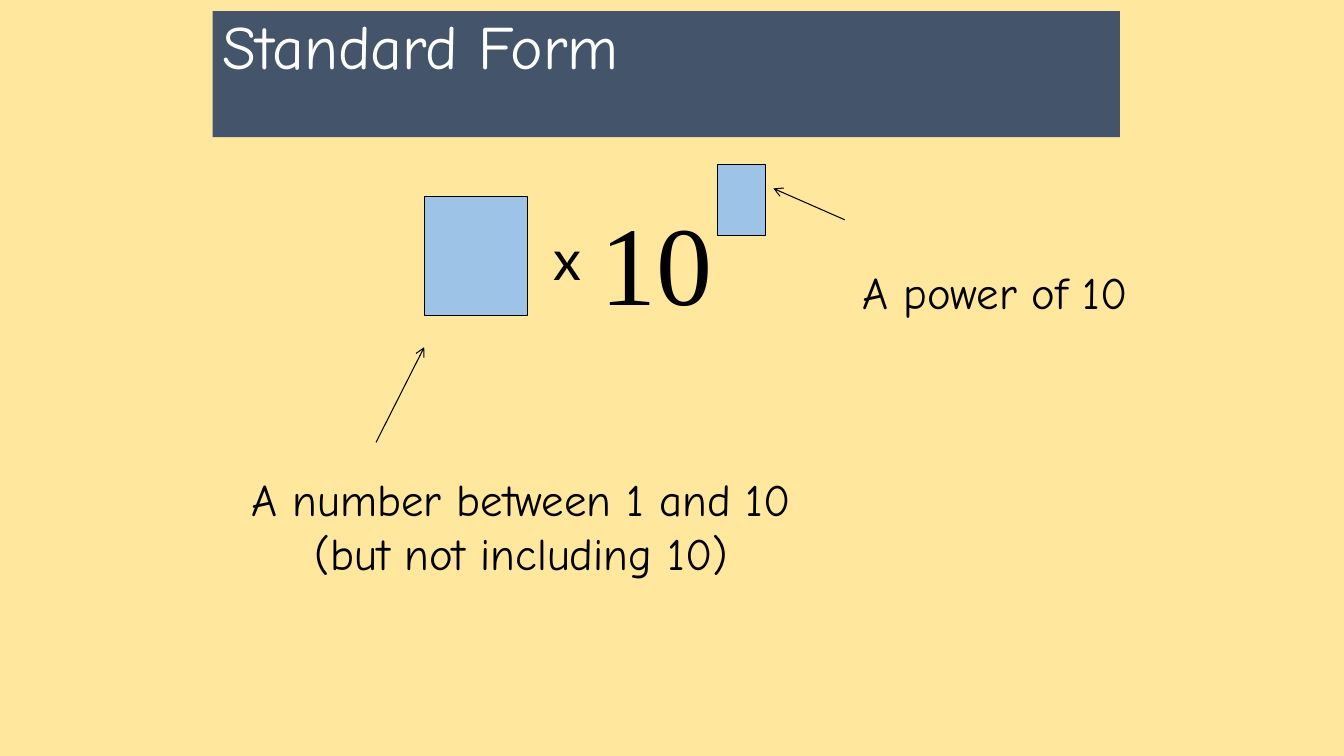
import pptx
import pptx.dml.color
import pptx.enum.shapes
import pptx.enum.text
import pptx.oxml.ns
import pptx.util
from lxml import etree

Pt = pptx.util.Pt
ALIGN = pptx.enum.text.PP_ALIGN

COLOURS = {
    "background": "FFE79E",
    "banner": "44546A",
    "square": "9DC3E6",
    "ink": "000000",
    "title": "FFFFFF",
}

# Content: places are left, top, width, height in points
TITLE = ("Standard Form", (152, 8, 648, 90))
SQUARES = [
    (303, 140.4, 73.5, 85),
    (512.6, 117.4, 34, 51),
]
# lines, place, font, size, alignment, wrap
LABELS = [
    (["x"], (388, 157, 34.6, 55.4), "Lato", 40, ALIGN.LEFT, False),
    (["10"], (422, 134.6, 119, 104.4), "Times New Roman", 80, ALIGN.LEFT, True),
    (["A number between 1 and 10", "(but not including 10)"],
     (159.8, 333.4, 425.5, 85), "Comic Neue", 32, ALIGN.CENTER, False),
    (["A power of 10"], (609, 185.8, 224.6, 46), "Comic Neue", 32, ALIGN.LEFT, False),
]
# start x, start y, end x, end y
ARROWS = [
    (268.6, 316, 303, 248),
    (603.4, 157, 552.4, 134.6),
]


def colour(name):
    return pptx.dml.color.RGBColor.from_string(COLOURS[name])


def add_rectangle(place, fill, outline=None):
    box = slide.shapes.add_shape(
        pptx.enum.shapes.MSO_SHAPE.RECTANGLE, *map(Pt, place))
    box.shadow.inherit = False
    box.fill.solid()
    box.fill.fore_color.rgb = colour(fill)
    if outline:
        box.line.color.rgb = colour(outline)
        box.line.width = Pt(0.75)
    else:
        box.line.fill.background()
    return box


def write(box, lines, font, size, ink, align, wrap=True):
    frame = box.text_frame
    frame.word_wrap = wrap
    frame.vertical_anchor = pptx.enum.text.MSO_ANCHOR.TOP
    frame.text = "\n".join(lines)
    for para in frame.paragraphs:
        para.alignment = align
        para.font.name = font
        para.font.size = Pt(size)
        para.font.color.rgb = colour(ink)


def add_arrow(ends):
    arrow = slide.shapes.add_connector(
        pptx.enum.shapes.MSO_CONNECTOR.STRAIGHT, *map(Pt, ends))
    arrow.line.color.rgb = colour("ink")
    arrow.line.width = Pt(0.75)
    qn = pptx.oxml.ns.qn
    etree.SubElement(arrow.line._get_or_add_ln(), qn("a:tailEnd"), type="arrow")
    etree.SubElement(arrow._element.spPr, qn("a:effectLst"))


deck = pptx.Presentation()
deck.slide_width, deck.slide_height = Pt(960), Pt(540)
slide = deck.slides.add_slide(deck.slide_layouts[6])
slide.background.fill.solid()
slide.background.fill.fore_color.rgb = colour("background")

# Title banner
title, title_place = TITLE
banner = add_rectangle(title_place, "banner")
write(banner, [title], "Comic Neue", 44, "title", ALIGN.LEFT)
banner.text_frame.paragraphs[0].line_spacing = 0.9

# Empty squares for the number and the power
for place in SQUARES:
    add_rectangle(place, "square", "ink")

# Formula and explanations
for lines, place, font, size, align, wrap in LABELS:
    box = slide.shapes.add_textbox(*map(Pt, place))
    write(box, lines, font, size, "ink", align, wrap)

# Arrows from explanations to squares
for ends in ARROWS:
    add_arrow(ends)

deck.save("out.pptx")
